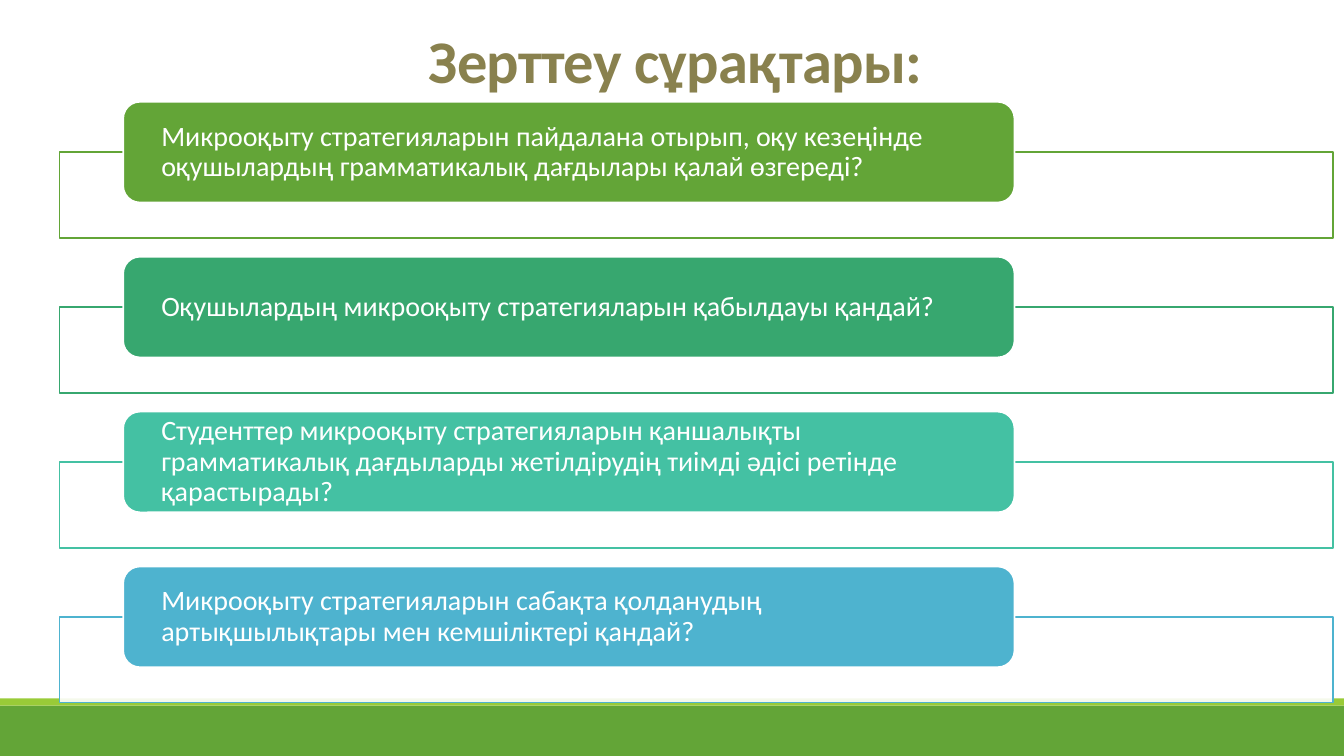
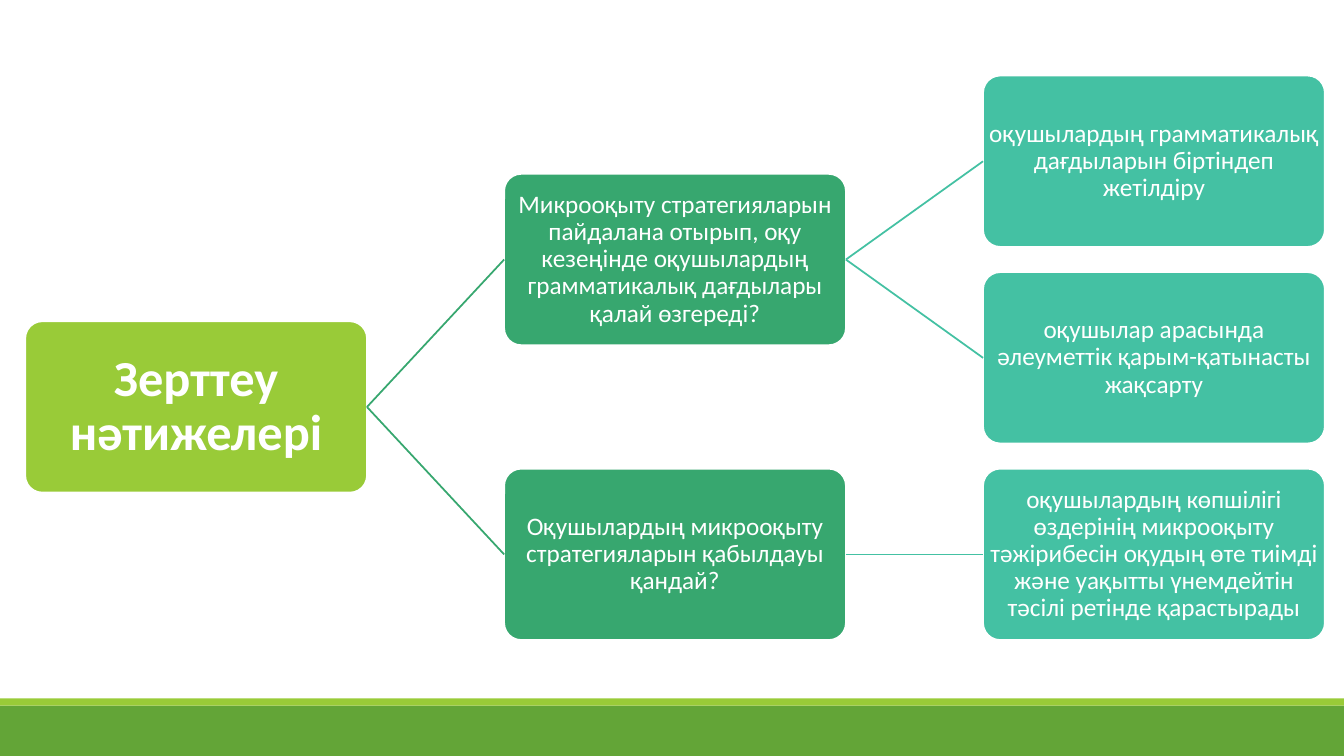
from dataclasses import dataclass

from lxml.etree import SubElement
from pptx import Presentation
from pptx.dml.color import RGBColor
from pptx.enum.shapes import MSO_CONNECTOR, MSO_SHAPE
from pptx.enum.text import MSO_ANCHOR, MSO_AUTO_SIZE, PP_ALIGN
from pptx.oxml.ns import qn
from pptx.util import Inches, Pt


@dataclass(frozen=True)
class Theme:
    font: str = "Calibri"
    white: str = "FFFFFF"
    title: str = "89814E"
    lime: str = "99CB38"
    green: str = "63A537"
    emerald: str = "37A76F"
    teal: str = "44C1A3"
    blue: str = "4EB3CF"
    title_size: float = 43.2
    root_size: float = 36
    question_size: float = 20
    node_size: float = 18
    line_width: float = 1.25
    line_spacing: float = 0.9


@dataclass(frozen=True)
class Box:
    left: float
    top: float
    width: float
    height: float

    def lengths(self):
        return [Inches(n) for n in (self.left, self.top, self.width, self.height)]


@dataclass(frozen=True)
class Node:
    text: str
    children: tuple = ()


THEME = Theme()
SLIDE = Box(0, 0, 13.33, 7.5)
TITLE_BOX = Box(1.2, 0.31, 11, 0.66)
QUESTIONS_BOX = Box(0.59, 1.01, 12.63, 5.96)
TREE_BOX = Box(0.25, 0.75, 12.89, 5.6)
TITLE_ONLY, BLANK = 5, 6

GROWTH = ("Микрооқыту стратегияларын пайдалана отырып, оқу кезеңінде "
          "оқушылардың грамматикалық дағдылары қалай өзгереді?")
ATTITUDE = "Оқушылардың микрооқыту стратегияларын қабылдауы қандай?"

QUESTIONS = [
    (GROWTH, THEME.green),
    (ATTITUDE, THEME.emerald),
    ("Студенттер микрооқыту стратегияларын қаншалықты грамматикалық "
     "дағдыларды жетілдірудің тиімді әдісі ретінде қарастырады?", THEME.teal),
    ("Микрооқыту стратегияларын сабақта қолданудың артықшылықтары мен "
     "кемшіліктері қандай?", THEME.blue),
]

RESULTS = Node("Зерттеу нәтижелері", (
    Node(GROWTH, (
        Node("оқушылардың грамматикалық дағдыларын біртіндеп жетілдіру"),
        Node("оқушылар арасында әлеуметтік қарым-қатынасты жақсарту"),
    )),
    Node(ATTITUDE, (
        Node("оқушылардың көпшілігі өздерінің микрооқыту тәжірибесін оқудың "
             "өте тиімді және уақытты үнемдейтін тәсілі ретінде қарастырады"),
    )),
))


def rgb(color):
    return RGBColor.from_string(color)


def set_line(item, color):
    item.line.color.rgb = rgb(color)
    item.line.width = Pt(THEME.line_width)


def add_block(page, box, fill, line=None, kind=MSO_SHAPE.RECTANGLE):
    shape = page.shapes.add_shape(kind, *box.lengths())
    shape.shadow.inherit = False
    shape.fill.solid()
    shape.fill.fore_color.rgb = rgb(fill)
    if line:
        set_line(shape, line)
    else:
        shape.line.fill.background()
    return shape


def write(shape, text, size, color=THEME.white, bold=False, align=PP_ALIGN.CENTER,
          anchor=MSO_ANCHOR.MIDDLE, spacing=THEME.line_spacing):
    """Fill a shape with one formatted paragraph and return its run."""
    frame = shape.text_frame
    frame.text = text
    frame.word_wrap = True
    frame.auto_size = MSO_AUTO_SIZE.NONE
    frame.vertical_anchor = anchor
    para = frame.paragraphs[0]
    para.alignment = align
    para.line_spacing = spacing
    span = para.runs[0]
    span.font.name = THEME.font
    span.font.size = Pt(size)
    span.font.bold = bold
    span.font.color.rgb = rgb(color)
    return span


def set_insets(shape, across, down):
    frame = shape.text_frame
    frame.margin_left = frame.margin_right = Inches(across)
    frame.margin_top = frame.margin_bottom = Inches(down)


def add_master_bands(deck, page):
    """Draw the footer bands on a page, then move them behind all slides."""
    tree = deck.slide_master.shapes.element
    bands = [(7, 0.5, THEME.green), (6.93, 0.07, THEME.lime)]
    for index, (top, height, color) in enumerate(bands):
        band = add_block(page, Box(0, top, SLIDE.width, height), color)
        tree.insert(2 + index, band.element)


def add_title(page, text):
    title = page.shapes.title
    title.left, title.top, title.width, title.height = TITLE_BOX.lengths()
    span = write(title, text, THEME.title_size, THEME.title, bold=True,
                 anchor=MSO_ANCHOR.BOTTOM, spacing=0.65)
    span.font._element.set("spc", "-50")


def add_question(page, box, text, color):
    """Place a framed panel with a label that overlaps its top edge."""
    label_height, panel_drop = 1, 0.5
    panel = add_block(page, Box(box.left, box.top + panel_drop, box.width,
                                box.height - panel_drop), THEME.white, color)
    fill_color = panel.fill._xPr.find(qn("a:solidFill"))[0]
    SubElement(fill_color, qn("a:alpha"), val="90000")
    label = add_block(page, Box(box.left + box.width * 0.05, box.top,
                                box.width * 0.7, label_height),
                      color, THEME.white, MSO_SHAPE.ROUNDED_RECTANGLE)
    set_insets(label, 0.33, 0)
    write(label, text, THEME.question_size, align=PP_ALIGN.LEFT)


def add_questions(page, box):
    row_height = 1.35
    step = (box.height - row_height) / (len(QUESTIONS) - 1)
    for row, (text, color) in enumerate(QUESTIONS):
        place = Box(box.left, box.top + row * step, box.width, row_height)
        add_question(page, place, text, color)


def add_link(page, parent, child, color):
    link = page.shapes.add_connector(MSO_CONNECTOR.STRAIGHT, 0, 0, 0, 0)
    link.begin_connect(parent, 3)
    link.end_connect(child, 1)
    set_line(link, color)
    SubElement(link.element.spPr, qn("a:effectLst"))


def add_tree(page, box, root):
    """Draw a tree left to right, each parent centred on its children."""
    colors = [THEME.lime, THEME.emerald, THEME.teal]
    width, height, row_step = 3.39, 1.7, 1.95
    column_step = (box.width - width) / (len(colors) - 1)

    def add_node(node, level, first_row):
        """Return the shape, its row and the next free row."""
        next_row, branches = first_row, []
        for child in node.children:
            shape, child_row, next_row = add_node(child, level + 1, next_row)
            branches.append((shape, child_row))
        if branches:
            row = (branches[0][1] + branches[-1][1]) / 2
        else:
            row, next_row = first_row, first_row + 1
        place = Box(box.left + level * column_step, box.top + row * row_step,
                    width, height)
        shape = add_block(page, place, colors[level], THEME.white,
                          MSO_SHAPE.ROUNDED_RECTANGLE)
        shape.adjustments[0] = 0.1
        is_root = level == 0
        inset = 0.03 if is_root else 0.01
        set_insets(shape, inset, inset)
        write(shape, node.text, THEME.root_size if is_root else THEME.node_size,
              bold=is_root)
        for child_shape, _ in branches:
            add_link(page, shape, child_shape, colors[level + 1])
        return shape, row, next_row

    add_node(root, 0, 0)


def main():
    deck = Presentation()
    deck.slide_width, deck.slide_height = Inches(SLIDE.width), Inches(SLIDE.height)

    questions = deck.slides.add_slide(deck.slide_layouts[TITLE_ONLY])
    add_master_bands(deck, questions)
    add_title(questions, "Зерттеу сұрақтары:")
    add_questions(questions, QUESTIONS_BOX)

    results = deck.slides.add_slide(deck.slide_layouts[BLANK])
    add_tree(results, TREE_BOX, RESULTS)

    deck.save("out.pptx")


if __name__ == "__main__":
    main()
